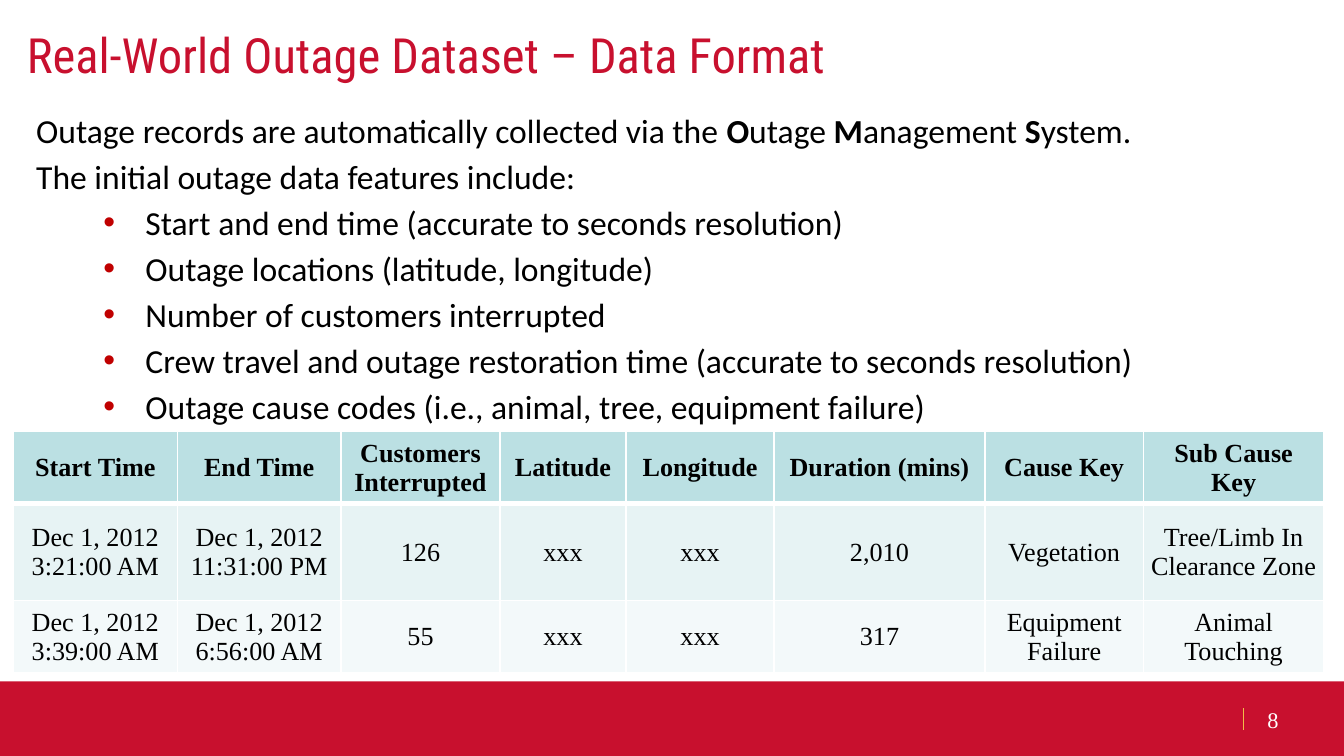
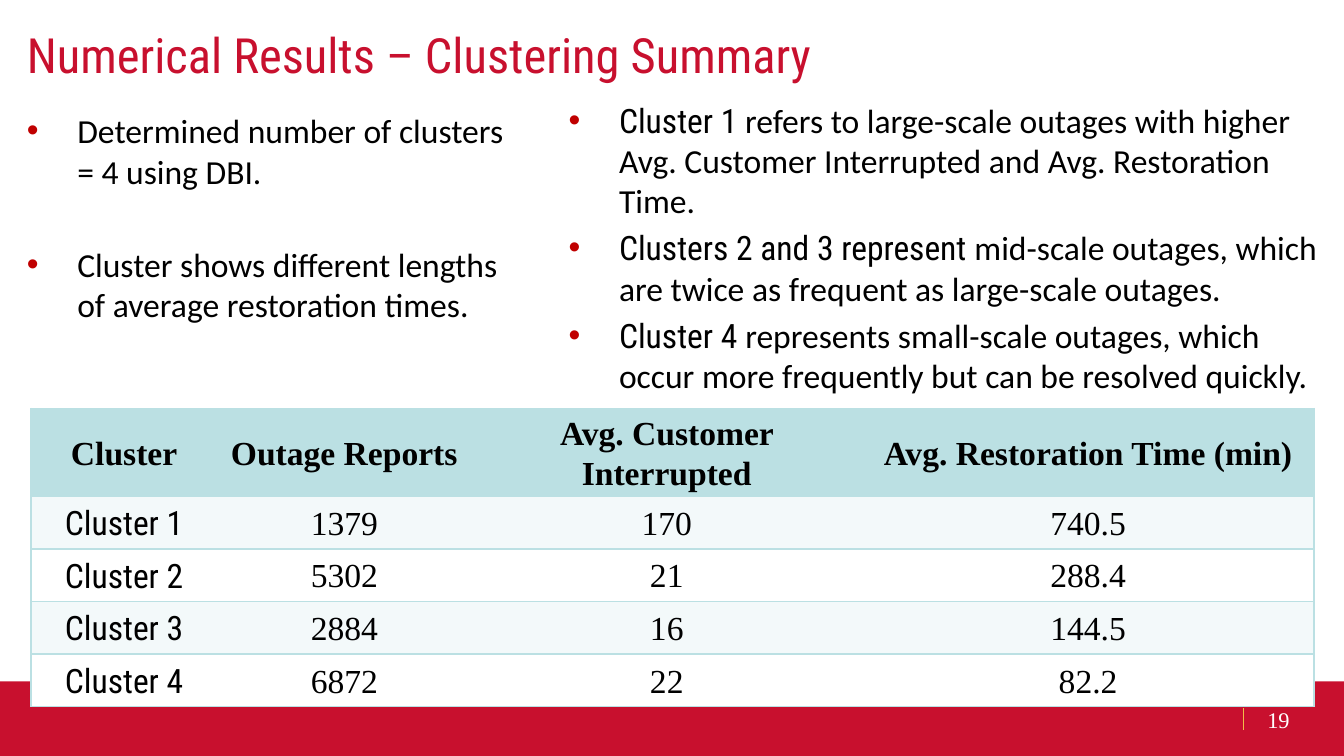
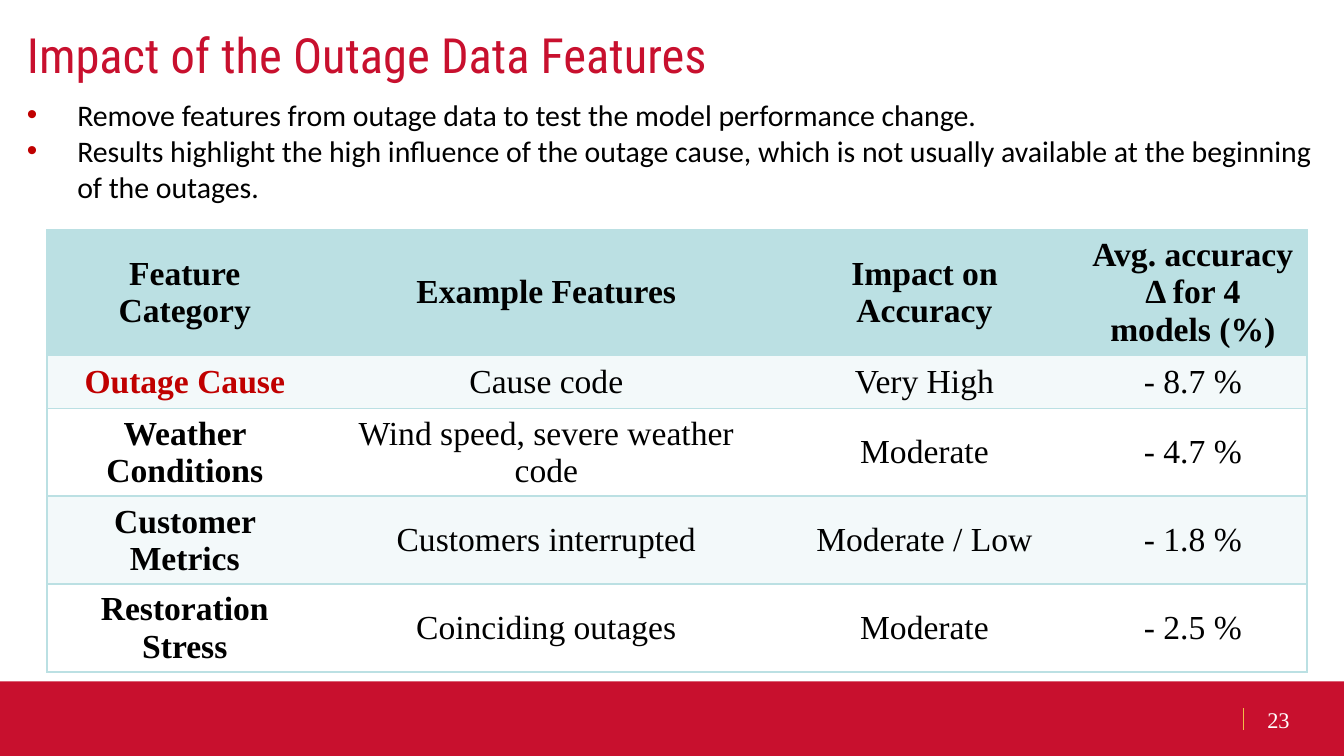
import lxml.etree
import pptx
import pptx.dml.color
import pptx.enum.shapes
import pptx.enum.text
import pptx.oxml.ns
import pptx.util

Pt = pptx.util.Pt
Align = pptx.enum.text.PP_ALIGN
Anchor = pptx.enum.text.MSO_ANCHOR
qn = pptx.oxml.ns.qn

# Shared colours, fonts and formats
hues = {"red": "C8102E", "gold": "F1BE48", "dark": "C00000", "black": "000000",
        "white": "FFFFFF", "teal": "BBE0E3", "pale": "E7F3F4", "mist": "F3F9FA"}
sans, serif, slim = "Calibri", "Times New Roman", "Roboto Condensed"
frame_form = {"word_wrap": True, "auto_size": pptx.enum.text.MSO_AUTO_SIZE.NONE,
              "vertical_anchor": Anchor.TOP, "margin_left": Pt(7.2),
              "margin_right": Pt(7.2), "margin_top": Pt(3.6), "margin_bottom": Pt(3.6)}


def put(item, form):
    """Set each format value; a hue goes to the colour of a font."""
    for name, value in form.items():
        if name == "hue":
            item.color.rgb = pptx.dml.color.RGBColor.from_string(hues[value])
        else:
            setattr(item, name, value)


def add(root, tag, **marks):
    """Append a drawing element and return it."""
    return lxml.etree.SubElement(root, qn("a:" + tag), marks)


# Lists: each paragraph is left edge, hang, space before, runs (text, changes)
bold = {"bold": True}
thin = {"name": slim}
points = ["Start and end time (accurate to seconds resolution)",
          "Outage locations (latitude, longitude)",
          "Number of customers interrupted",
          "Crew travel and outage restoration time (accurate to seconds resolution)",
          "Outage cause codes (i.e., animal, tree, equipment failure)"]
intro = [("Outage records are automatically collected via the ", {}), ("O", bold),
         ("utage ", {}), ("M", bold), ("anagement ", {}), ("S", bold), ("ystem.", {})]
format_list = [(0, 0, 0, intro),
               (0, 0, 3, [("The initial outage data features include:", {})])]
format_list += [(58.5, 22.5, 3, [(point, {})]) for point in points]

count_list = [
    (27, 27, 0, [("Determined number of clusters = 4 using DBI.", {})]),
    (27, 27, 28.5, [("Cluster shows different lengths of average restoration times.", {})])]
scale_list = [
    (27, 27, 0, [("Cluster 1", thin), (" refers to large-scale outages with higher Avg. "
                                       "Customer Interrupted and Avg. Restoration Time.", {})]),
    (27, 27, 3.6, [("Clusters 2 and 3 represent", thin),
                   (" mid-scale outages, which are twice as frequent as "
                    "large-scale outages.", {})]),
    (27, 27, 3.6, [("Cluster 4 ", thin), ("represents small-scale outages, which occur more "
                                          "frequently but can be resolved quickly.", {})])]
impact_list = [
    (27, 27, 0, [("Remove features from outage data to test the model "
                  "performance change.", {})]),
    (27, 27, 0, [("Results highlight the high influence of the outage cause, which is not "
                  "usually available at the beginning of the outages.", {})])]

# Slides: layout, lists (box, size, paragraphs) and table
pages = [
    {"title": "Real-World Outage Dataset – Data Format", "number": "8", "layout": 1,
     "lists": [((12.2, 55.4, 694, 178), 18, format_list)],
     "spot": (7.2, 231.2), "cols": [87.8, 87.8, 85, 67.7, 79.2, 113, 85, 96.5],
     "rows": [38.8, 51.8, 38.8], "size": 14, "pad": (3.6, 3.6), "space": 1,
     "fills": ["teal", "pale", "mist"], "grid": True, "lead": {},
     "cells": [
         ["Start Time", "End Time", "Customers Interrupted", "Latitude", "Longitude",
          "Duration (mins)", "Cause Key", "Sub Cause Key"],
         ["Dec 1, 2012 3:21:00 AM", "Dec 1, 2012 11:31:00 PM", "126", "xxx", "xxx",
          "2,010", "Vegetation", "Tree/Limb In Clearance Zone"],
         ["Dec 1, 2012 3:39:00 AM", "Dec 1, 2012 6:56:00 AM", "55", "xxx", "xxx",
          "317", "Equipment\nFailure", "Animal Touching"]]},
    {"title": "Numerical Results – Clustering Summary", "number": "19", "layout": 3,
     "lists": [((7.2, 55.4, 279.4, 125.3), 18, count_list),
               ((297.4, 49.7, 415.6, 168.5), 18, scale_list)],
     "spot": (16.5, 218.9), "cols": [100, 136, 209.5, 242],
     "rows": [47] + [28.2] * 4, "size": 18, "pad": (5, 0), "space": 1.07,
     "fills": ["teal"] + ["mist", "white"] * 2, "grid": False, "lead": thin,
     "cells": [
         ["Cluster", "Outage Reports", "Avg. Customer Interrupted",
          "Avg. Restoration Time (min)"],
         ["Cluster 1", "1379", "170", "740.5"],
         ["Cluster 2", "5302", "21", "288.4"],
         ["Cluster 3", "2884", "16", "144.5"],
         ["Cluster 4", "6872", "22", "82.2"]]},
    {"title": "Impact of the Outage Data Features", "number": "23", "layout": 1,
     "lists": [((7.2, 48.2, 710, 89.3), 16, impact_list)],
     "spot": (25.2, 123.1), "cols": [147.6, 239.8, 165.4, 122.2],
     "rows": [67.1, 28.6] + [47.1] * 3, "size": 18, "pad": (7.2, 3.6), "space": 1,
     "fills": ["teal"] + ["mist", "white"] * 2, "grid": False, "lead": bold,
     "cells": [
         ["Feature Category", "Example Features", "Impact on Accuracy",
          "Avg. accuracy Δ for 4 models (%)"],
         ["Outage Cause", "Cause code", "Very High", "- 8.7 %"],
         ["Weather Conditions", "Wind speed, severe weather code", "Moderate", "- 4.7 %"],
         ["Customer Metrics", "Customers interrupted", "Moderate / Low", "- 1.8 %"],
         ["Restoration Stress", "Coinciding outages", "Moderate", "- 2.5 %"]]},
]

deck = pptx.Presentation()
put(deck, {"slide_width": Pt(720), "slide_height": Pt(405)})

for page in pages:
    slide = deck.slides.add_slide(deck.slide_layouts[page["layout"]])
    shapes = slide.shapes

    # Title
    title = shapes.title
    put(title, {"left": Pt(7.2), "top": Pt(10), "width": Pt(683), "height": Pt(36.7)})
    put(title.text_frame, frame_form)
    para = title.text_frame.paragraphs[0]
    para.alignment = Align.LEFT
    run = para.add_run()
    run.text = page["title"]
    put(run.font, {"name": slim, "size": Pt(26), "hue": "red"})

    # Footer band, divider and slide number
    band = shapes.add_shape(pptx.enum.shapes.MSO_SHAPE.RECTANGLE,
                            Pt(0), Pt(365), Pt(720), Pt(40))
    band.shadow.inherit = False
    band.fill.solid()
    put(band.fill, {})
    band.fill.fore_color.rgb = pptx.dml.color.RGBColor.from_string(hues["red"])
    band.line.fill.background()
    rule = shapes.add_connector(pptx.enum.shapes.MSO_CONNECTOR.STRAIGHT,
                                Pt(666), Pt(379.4), Pt(666), Pt(391))
    put(rule.line, {"width": Pt(0.75), "hue": "gold"})
    add(rule._element.spPr, "effectLst")
    number = shapes.add_textbox(Pt(671.8), Pt(374.6), Pt(41.8), Pt(21.6))
    put(number.text_frame, {**frame_form, "vertical_anchor": Anchor.MIDDLE})
    run = number.text_frame.paragraphs[0].add_run()
    run.text = page["number"]
    put(run.font, {"name": serif, "size": Pt(12), "hue": "white"})

    # Lists
    for spot, (box, size, paras) in enumerate(page["lists"], 1):
        body = slide.placeholders[spot]
        put(body, dict(zip(("left", "top", "width", "height"), map(Pt, box))))
        frame = body.text_frame
        put(frame, frame_form)
        for index, (left, hang, before, runs) in enumerate(paras):
            para = frame.add_paragraph() if index else frame.paragraphs[0]
            props = para._p.get_or_add_pPr()
            props.set("marL", str(int(Pt(left))))
            props.set("indent", str(int(Pt(-hang))))
            if hang:
                add(add(props, "buClr"), "srgbClr", val=hues["dark"])
                add(props, "buFont", typeface="Arial")
                add(props, "buChar", char="•")
            else:
                add(props, "buNone")
            put(para, {"level": int(left > 50), "space_before": Pt(before),
                       "alignment": Align.LEFT})
            for text, change in runs:
                run = para.add_run()
                run.text = text
                put(run.font, {"name": sans, "size": Pt(size), "hue": "black", **change})

    # Table
    cols, rows = page["cols"], page["rows"]
    left, top = page["spot"]
    table = shapes.add_table(len(rows), len(cols), Pt(left), Pt(top),
                             Pt(sum(cols)), Pt(sum(rows))).table
    put(table, {"first_row": False, "horz_banding": False})
    for col, width in zip(table.columns, cols):
        col.width = Pt(width)
    wide, high = map(Pt, page["pad"])
    for y, texts in enumerate(page["cells"]):
        table.rows[y].height = Pt(rows[y])
        for x, text in enumerate(texts):
            cell = table.cell(y, x)
            put(cell, {"text": text, "vertical_anchor": Anchor.MIDDLE, "margin_left": wide,
                       "margin_right": wide, "margin_top": high, "margin_bottom": high})
            form = {"name": serif, "size": Pt(page["size"]), "hue": "black", "bold": y == 0}
            if y and x == 0:
                form.update(page["lead"])
            if text == "Outage Cause":
                form["hue"] = "dark"
            for para in cell.text_frame.paragraphs:
                put(para, {"alignment": Align.CENTER, "line_spacing": page["space"]})
                for run in para.runs:
                    put(run.font, form)

            # Borders come before the fill
            grid = page["grid"]
            shown = {"lnL": grid or x == 0, "lnR": grid or x == len(cols) - 1,
                     "lnT": True, "lnB": True}
            props = cell._tc.get_or_add_tcPr()
            for side, show in shown.items():
                thick = grid and (y, side) in ((0, "lnB"), (1, "lnT"))
                edge = add(props, side, w=str(int(Pt(3 if thick else 1))))
                if show:
                    add(add(edge, "solidFill"), "srgbClr",
                        val=hues["white" if grid else "teal"])
                else:
                    add(edge, "noFill")
            cell.fill.solid()
            cell.fill.fore_color.rgb = pptx.dml.color.RGBColor.from_string(
                hues[page["fills"][y]])

deck.save("out.pptx")
